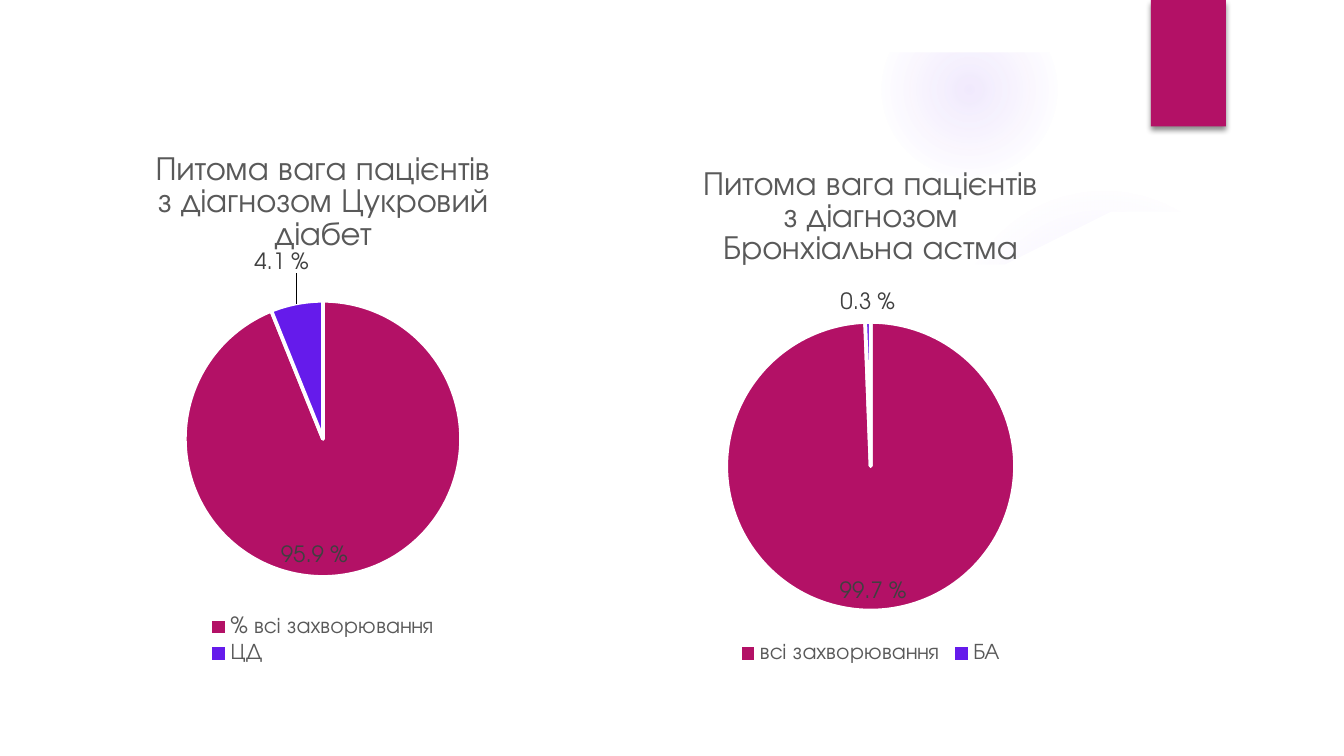
from lxml.etree import fromstring
from pptx import Presentation
from pptx.chart.data import CategoryChartData
from pptx.dml.color import RGBColor
from pptx.enum.chart import XL_CHART_TYPE, XL_LABEL_POSITION, XL_LEGEND_POSITION
from pptx.enum.shapes import MSO_SHAPE
from pptx.oxml import parse_xml
from pptx.oxml.ns import nsdecls
from pptx.util import Cm, Pt

FONT = "TeX Gyre Adventor"
MAGENTA, VIOLET, GLOW, WHITE = "B31166", "651BEB", "9B6BF2", "FFFFFF"


def paint(fill, color):
    fill.solid()
    fill.fore_color.rgb = RGBColor.from_string(color)


def style(font, size, color):
    font.name = FONT
    font.size = Pt(size)
    font.bold = False
    font.color.rgb = RGBColor.from_string(color)


presentation = Presentation()
presentation.slide_width = Cm(25.4)
presentation.slide_height = Cm(14.29)
slide = presentation.slides.add_slide(presentation.slide_layouts[6])
shapes = slide.shapes

# Soft round glows: left, top, diameter, (position, opacity) stops in percent
glows = [
    (17.93, 3.5, 5.87, [(0, 7), (36, 6), (69, 0)]),
    (16.66, 0.03, 3.33, [(0, 14), (36, 7), (73, 0)]),
]
for left, top, diameter, stops in glows:
    shape = shapes.add_shape(MSO_SHAPE.OVAL, Cm(left), Cm(top), Cm(diameter), Cm(diameter))
    shape.shadow.inherit = False
    shape.line.fill.background()
    shape.fill.background()
    stop_xml = "".join(
        f'<a:gs pos="{position * 1000}"><a:srgbClr val="{GLOW}">'
        f'<a:alpha val="{opacity * 1000}"/></a:srgbClr></a:gs>'
        for position, opacity in stops
    )
    gradient = parse_xml(
        f'<a:gradFill {nsdecls("a")} rotWithShape="1"><a:gsLst>{stop_xml}</a:gsLst>'
        '<a:path path="circle"><a:fillToRect l="50000" t="50000" r="50000" b="50000"/>'
        "</a:path></a:gradFill>"
    )
    properties = shape._element.spPr
    properties.replace(properties.find("{*}noFill"), gradient)

# White panel with a sagging top edge, and the white strip along the top
builder = shapes.build_freeform(24.46, 3.89, scale=Cm(1))
builder.add_line_segments([
    (22.86, 4.14), (20.73, 4.37), (18.59, 4.55), (16.51, 4.67), (13.97, 4.72),
    (11.1, 4.7), (6.86, 4.5), (0.97, 3.89), (0.97, 13.34), (24.46, 13.34),
])
panel = builder.convert_to_shape()
strip = shapes.add_shape(MSO_SHAPE.RECTANGLE, 0, 0, Cm(25.4), Cm(0.99))
for shape in (panel, strip):
    shape.shadow.inherit = False
    paint(shape.fill, WHITE)
    shape.line.fill.background()

# Magenta tab with a soft shadow
tab = shapes.add_shape(MSO_SHAPE.RECTANGLE, Cm(21.75), 0, Cm(1.42), Cm(2.39))
tab.shadow.inherit = False
paint(tab.fill, MAGENTA)
tab.line.fill.background()
tab._element.spPr.find("{*}effectLst").append(fromstring(
    f'<a:outerShdw {nsdecls("a")} blurRad="{Pt(3)}" dist="{Pt(2)}" dir="5400000">'
    '<a:srgbClr val="000000"><a:alpha val="45000"/></a:srgbClr></a:outerShdw>'
))

# Pie charts: title, box in cm, categories, values, labels, plot area (x, y, w, h),
# offset of the small slice's label
pies = [
    ("Питома вага пацієнтів з діагнозом Цукровий діабет", (1.75, 2.41, 8.71, 10.24),
     ["% всі захворювання", "ЦД"], [0.939, 0.061], ["95.9 %", "4.1 %"],
     (0.2, 0.32, 0.6, 0.51), (0.03, -0.04)),
    ("Питома вага пацієнтів з діагнозом Бронхіальна астма", (12.19, 2.69, 8.53, 9.96),
     ["всі захворювання", "БА"], [0.994, 0.006], ["99.7 %", "0.3 %"],
     (0.18, 0.34, 0.64, 0.55), None),
]
for title, box, categories, values, labels, plot_area, offset in pies:
    data = CategoryChartData(number_format="0.00%")
    data.categories = categories
    data.add_series("Series 1", values)
    chart = shapes.add_chart(XL_CHART_TYPE.PIE, *map(Cm, box), data).chart
    style(chart.font, 10, "000000")

    chart.has_title = True
    chart.chart_title.text_frame.text = title
    style(chart.chart_title.text_frame.paragraphs[0].runs[0].font, 18, "595959")
    chart.chart_title.include_in_layout = False

    chart.has_legend = True
    chart.legend.position = XL_LEGEND_POSITION.BOTTOM
    chart.legend.include_in_layout = False
    style(chart.legend.font, 12, "595959")

    # Slices and their labels: the large one inside, the small one outside
    plot = chart.plots[0]
    plot.vary_by_categories = True
    series = plot.series[0]
    positions = [XL_LABEL_POSITION.INSIDE_END, XL_LABEL_POSITION.OUTSIDE_END]
    for index, color in enumerate([MAGENTA, VIOLET]):
        point = series.points[index]
        paint(point.format.fill, color)
        paint(point.format.line.fill, WHITE)
        point.format.line.width = Pt(2)
        label = point.data_label
        label.text_frame.text = labels[index]
        style(label.text_frame.paragraphs[0].runs[0].font, 12, "404040")
        label.position = positions[index]
    series.data_labels.show_value = True
    series.data_labels.number_format = "0.00%"
    series.data_labels.number_format_is_linked = False
    style(series.data_labels.font, 12, "404040")

    # Fixed plot area and label offset
    area = chart._chartSpace.chart.plotArea
    for old_layout in area.findall("{*}layout"):
        area.remove(old_layout)
    sizes = "".join(f'<c:{key} val="{value}"/>' for key, value in zip("xywh", plot_area))
    area.insert(0, parse_xml(
        f'<c:layout {nsdecls("c")}><c:manualLayout><c:layoutTarget val="inner"/>'
        f'<c:xMode val="edge"/><c:yMode val="edge"/>{sizes}</c:manualLayout></c:layout>'
    ))
    if offset:
        small_label = area.findall(".//{*}dLbl")[1]
        small_label.insert(1, parse_xml(
            f'<c:layout {nsdecls("c")}><c:manualLayout><c:x val="{offset[0]}"/>'
            f'<c:y val="{offset[1]}"/></c:manualLayout></c:layout>'
        ))

presentation.save("out.pptx")
